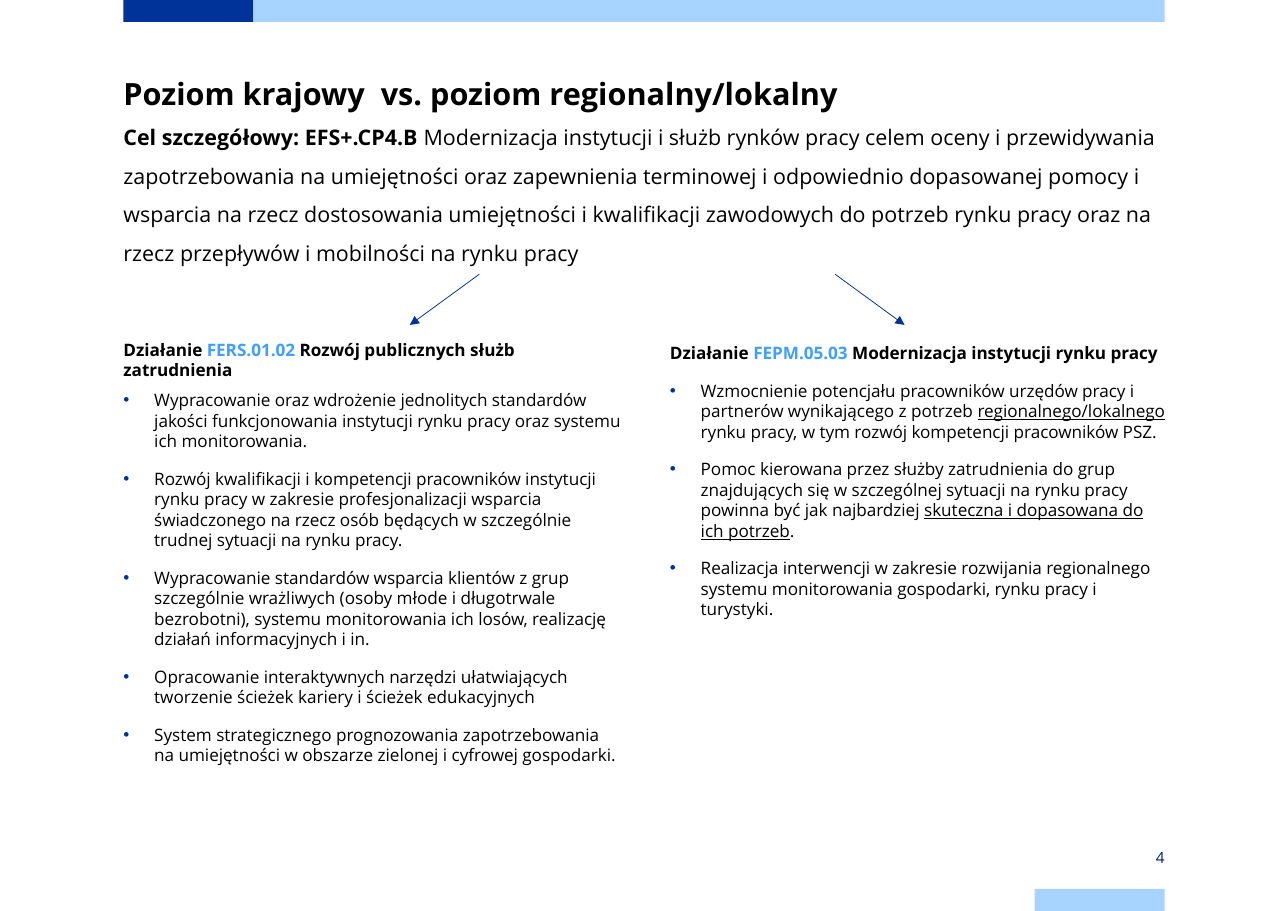
from lxml.etree import SubElement
from pptx import Presentation
from pptx.dml.color import RGBColor
from pptx.enum.shapes import MSO_CONNECTOR as Connector, MSO_SHAPE as Shape
from pptx.enum.text import MSO_ANCHOR as Anchor, MSO_AUTO_SIZE as AutoSize, PP_ALIGN as Align
from pptx.oxml.ns import qn
from pptx.util import Pt

PX = 9144
COLORS = {"navy": "003399", "sky": "A6D3FF", "code": "3D9FFF", "number": "002073", "text": "000000"}
GOAL = ("Modernizacja instytucji i służb rynków pracy celem oceny i przewidywania zapotrzebowania na "
        "umiejętności oraz zapewnienia terminowej i odpowiednio dopasowanej pomocy i wsparcia na rzecz "
        "dostosowania umiejętności i kwalifikacji zawodowych do potrzeb rynku pracy oraz na rzecz "
        "przepływów i mobilności na rynku pracy")
NATIONAL = [
    ["Wypracowanie oraz wdrożenie jednolitych standardów jakości funkcjonowania instytucji rynku pracy "
     "oraz systemu ich monitorowania."],
    ["Rozwój kwalifikacji i kompetencji pracowników instytucji rynku pracy w zakresie profesjonalizacji "
     "wsparcia świadczonego na rzecz osób będących w szczególnie trudnej sytuacji na rynku pracy."],
    ["Wypracowanie standardów wsparcia klientów z grup szczególnie wrażliwych (osoby młode i długotrwale "
     "bezrobotni), systemu monitorowania ich losów, realizację działań informacyjnych i in."],
    ["Opracowanie interaktywnych narzędzi ułatwiających tworzenie ścieżek kariery i ścieżek edukacyjnych"],
    ["System strategicznego prognozowania zapotrzebowania na umiejętności w obszarze zielonej i cyfrowej "
     "gospodarki."],
]
REGIONAL = [
    ["Wzmocnienie potencjału pracowników urzędów pracy i partnerów wynikającego z potrzeb ",
     "regionalnego/lokalnego ", "rynku pracy, w tym rozwój kompetencji pracowników PSZ."],
    ["Pomoc kierowana przez służby zatrudnienia do grup znajdujących się w szczególnej sytuacji na rynku "
     "pracy powinna być jak najbardziej ", "skuteczna i dopasowana do ich potrzeb", "."],
    ["Realizacja interwencji w zakresie rozwijania regionalnego systemu monitorowania gospodarki, rynku "
     "pracy i turystyki."],
]


class SlideBuilder:
    """Draws styled elements on one page, with lengths in hundredths of an inch."""

    def __init__(self, deck, font="Open Sans"):
        self.page = deck.slides.add_slide(deck.slide_layouts[3])
        self.font = font

    def color(self, name):
        return RGBColor.from_string(COLORS[name])

    def style(self, font, size, color="text", bold=False):
        font.name, font.size, font.bold = self.font, Pt(size), bold
        font.color.rgb = self.color(color)

    def frame(self, box, left, top, width, height, anchor=Anchor.TOP, inset=0):
        box.left, box.top, box.width, box.height = (n * PX for n in (left, top, width, height))
        frame = box.text_frame
        frame.auto_size, frame.word_wrap, frame.vertical_anchor = AutoSize.NONE, True, anchor
        frame.margin_left = frame.margin_right = 0
        frame.margin_top = frame.margin_bottom = inset * PX
        return frame

    def bar(self, left, top, width, height, color):
        bar = self.page.shapes.add_shape(Shape.RECTANGLE, *(n * PX for n in (left, top, width, height)))
        bar.shadow.inherit = False
        bar.fill.solid()
        bar.fill.fore_color.rgb = self.color(color)
        bar.line.fill.background()

    def title(self, heading, label, goal, *place):
        para = self.frame(self.page.shapes.title, *place).paragraphs[0]
        para.alignment, para.line_spacing = Align.LEFT, 1.5
        for text, size, bold in ((heading, 20, True), (label, 14, True), (goal, 14, False)):
            span = para.add_run()
            span.text = text
            self.style(span.font, size, bold=bold)
            if text == heading:
                para.add_line_break()

    def bullet(self, para, marked):
        props = para._p.get_or_add_pPr()
        props.set("marL", str(28 * PX if marked else 0))
        props.set("indent", str(-28 * PX if marked else 0))
        if marked:
            tint = SubElement(props, qn("a:buClr"))
            SubElement(tint, qn("a:srgbClr"), val=COLORS["navy"])
            SubElement(props, qn("a:buFont"), typeface="Arial")
            SubElement(props, qn("a:buChar"), char="•")
        else:
            SubElement(props, qn("a:buNone"))

    def column(self, index, code, name, items, first_gap, *place):
        frame = self.frame(self.page.placeholders[index], *place)
        para = frame.paragraphs[0]
        para.space_before = Pt(0)
        self.bullet(para, False)
        for text, color in (("Działanie ", "text"), (code + " ", "code"), (name, "text")):
            span = para.add_run()
            span.text = text
            self.style(span.font, 11.2, color, True)
        for number, item in enumerate(items):
            para = frame.add_paragraph()
            para.space_before = Pt(11 if number else first_gap)
            self.bullet(para, True)
            self.style(para.font, 11.2)
            for order, text in enumerate(item):
                span = para.add_run()
                span.text = text
                if order == 1:
                    span.font.underline = True

    def page_number(self, text, *place):
        box = self.page.shapes.add_textbox(0, 0, PX, PX)
        para = self.frame(box, *place, anchor=Anchor.MIDDLE, inset=8).paragraphs[0]
        para.text, para.alignment = text, Align.RIGHT
        self.style(para.font, 10, "number")

    def arrow(self, *ends):
        arrow = self.page.shapes.add_connector(Connector.STRAIGHT, *(n * PX for n in ends))
        arrow.line.color.rgb, arrow.line.width = self.color("navy"), Pt(0.5)
        SubElement(arrow.line._get_or_add_ln(), qn("a:tailEnd"), type="triangle")
        SubElement(arrow._element.spPr, qn("a:effectLst"))


def main():
    deck = Presentation()
    deck.slide_width, deck.slide_height = 1169 * PX, 827 * PX
    slide = SlideBuilder(deck)
    slide.bar(112, 0, 118, 20, "navy")
    slide.bar(230, 0, 827, 20, "sky")
    slide.bar(939, 807, 118, 20, "sky")
    slide.title("Poziom krajowy  vs. poziom regionalny/lokalny", "Cel szczegółowy: EFS+.CP4.B ", GOAL,
                112, 51, 945, 197)
    slide.column(1, "FERS.01.02", "Rozwój publicznych służb zatrudnienia", NATIONAL, 6, 112, 308, 453, 433)
    slide.column(2, "FEPM.05.03", "Modernizacja instytucji rynku pracy", REGIONAL, 11, 608, 311, 453, 417)
    slide.page_number("4", 939, 768, 118, 20)
    slide.arrow(758, 249, 821, 295)
    slide.arrow(435, 249, 372, 295)
    deck.save("out.pptx")


if __name__ == "__main__":
    main()
